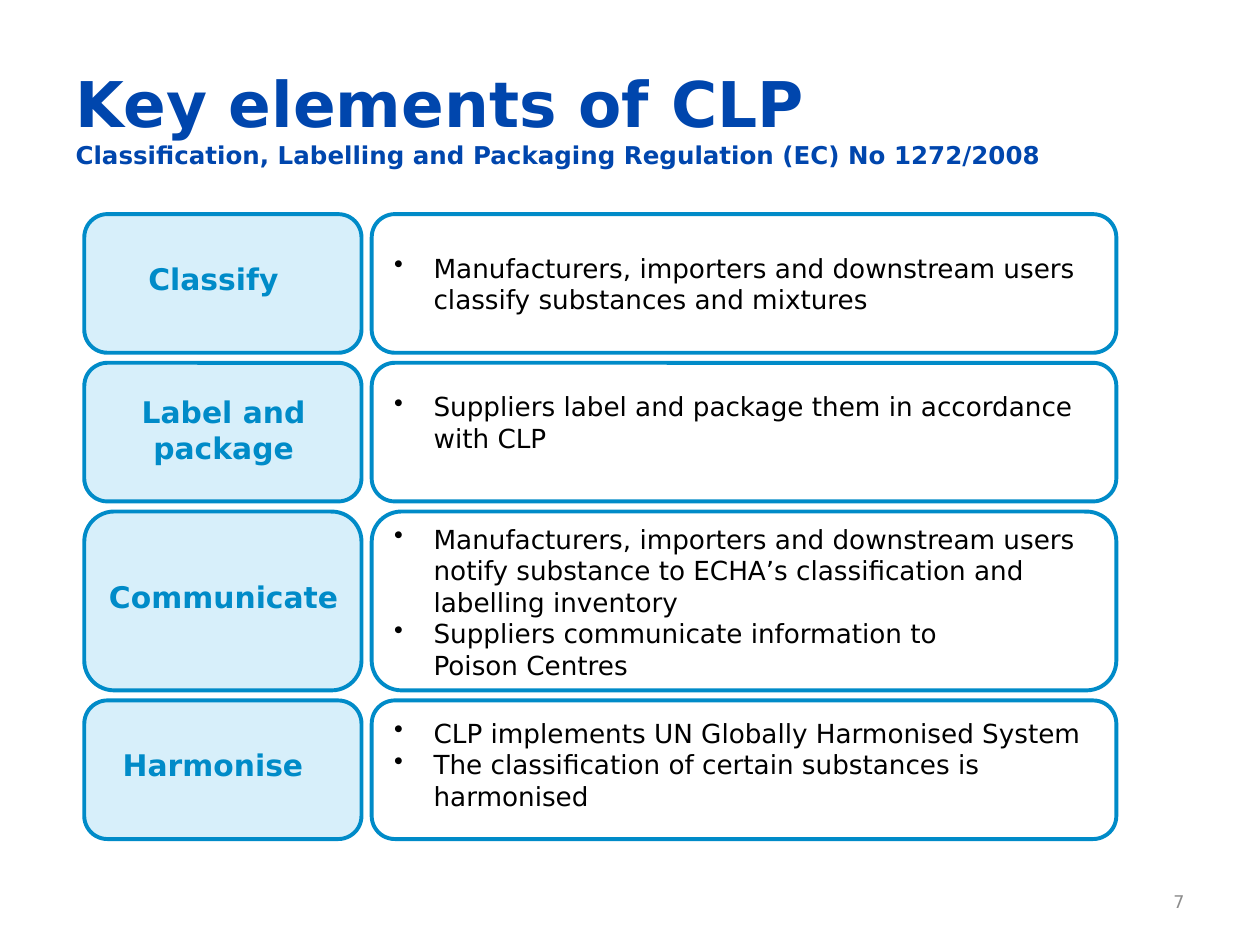
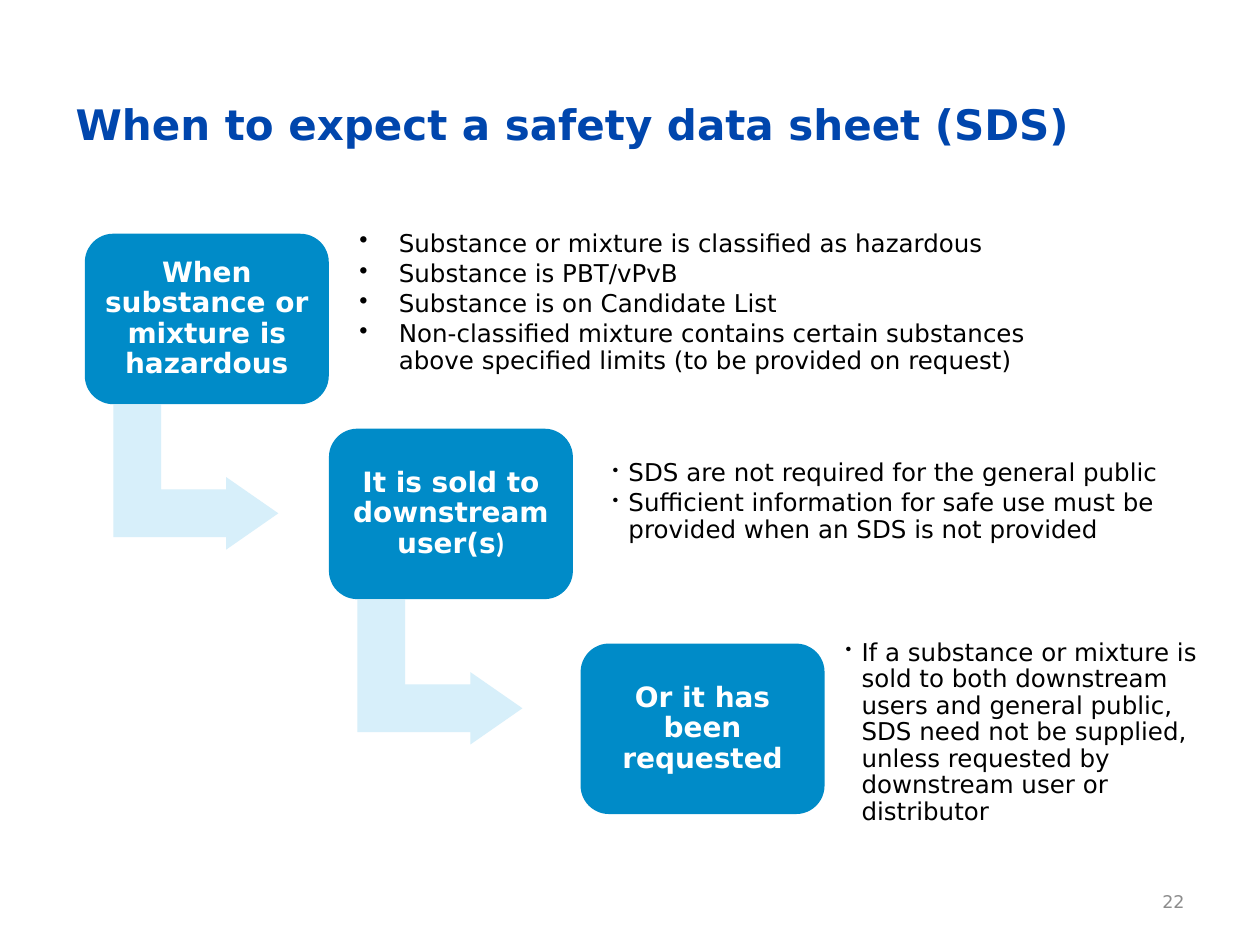
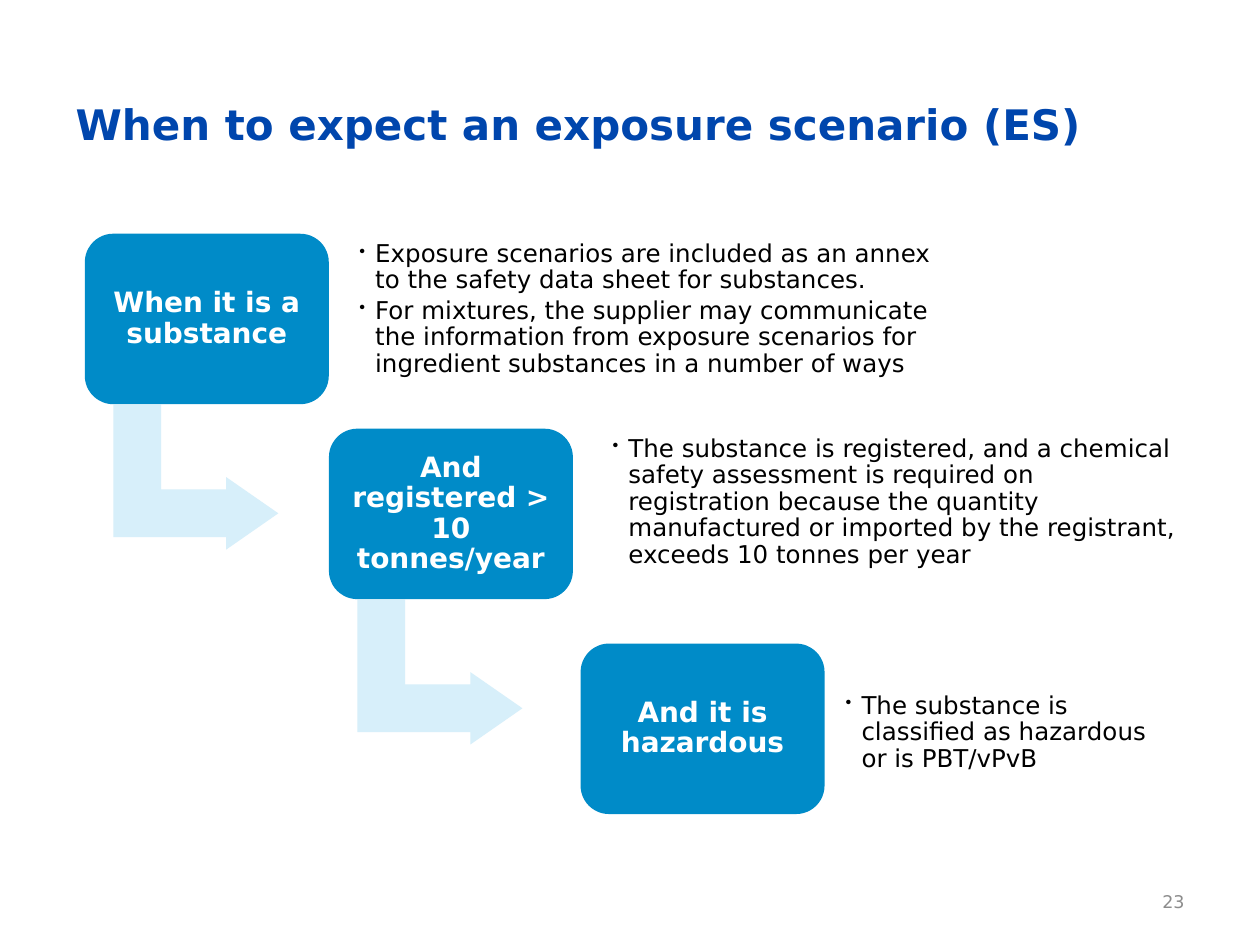
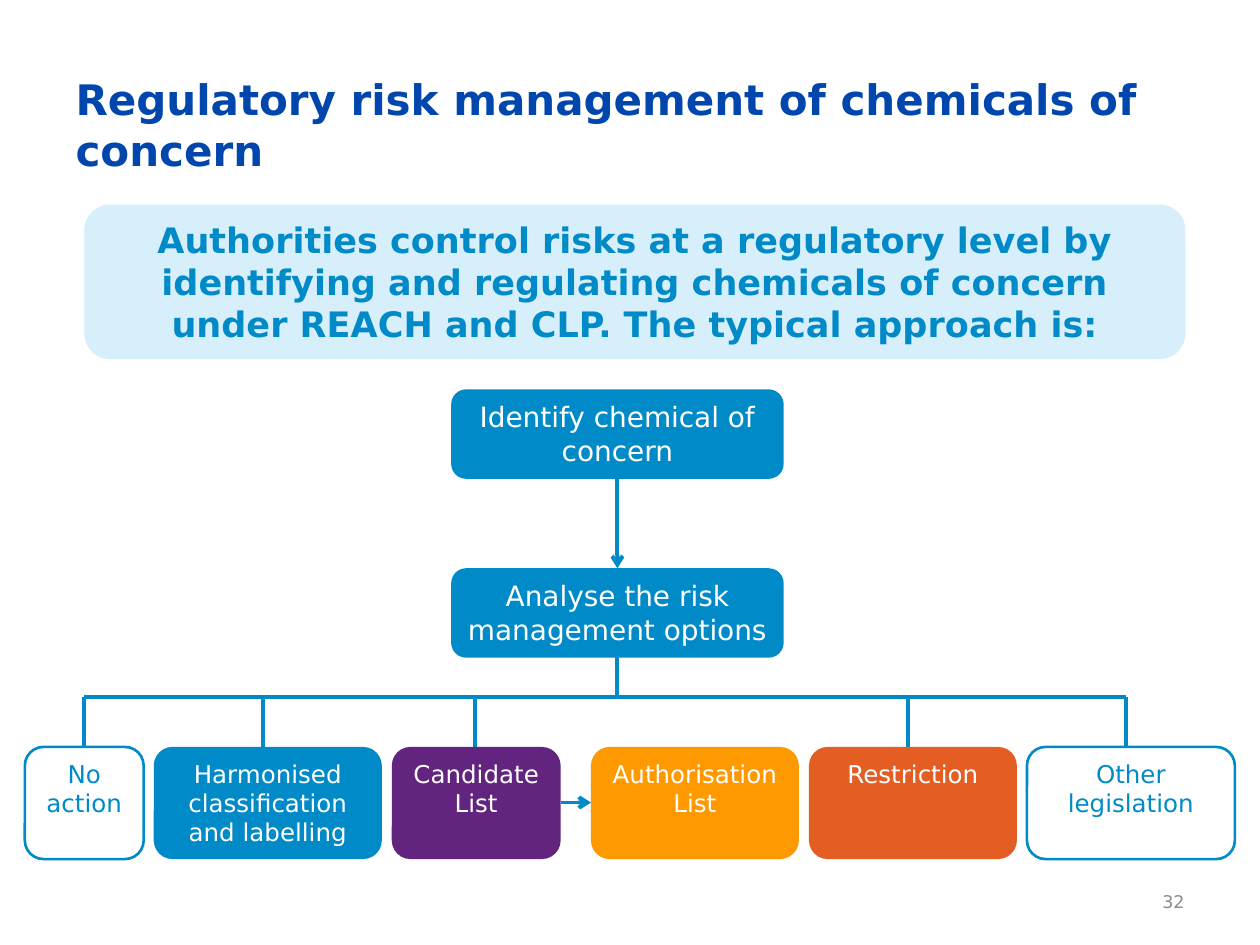
from dataclasses import dataclass

import pptx
import pptx.dml.color
import pptx.enum.shapes
import pptx.enum.text
import pptx.oxml
import pptx.oxml.ns
import pptx.util
from lxml import etree

Pt = pptx.util.Pt
qn = pptx.oxml.ns.qn
SHAPES = pptx.enum.shapes.MSO_SHAPE
ALIGN = pptx.enum.text.PP_ALIGN
ANCHOR = pptx.enum.text.MSO_ANCHOR


@dataclass(frozen=True)
class Theme:
    font: str = "DejaVu Sans"
    title: str = "0046AD"
    accent: str = "008BC8"
    pale: str = "D7EFFA"
    text: str = "000000"
    white: str = "FFFFFF"
    muted: str = "8C8C8C"
    purple: str = "62247E"
    amber: str = "FF9900"
    orange: str = "E45E24"
    headline_size: float = 36
    title_size: float = 24
    banner_size: float = 20
    label_size: float = 17
    node_size: float = 16
    list_size: float = 15
    note_size: float = 14
    number_size: float = 10
    line_width: float = 2.25
    thin_line: float = 1.5


THEME = Theme()
GAP = 5.76
STEP_SIZE = (139.4, 97.4)
STEP_CORNERS = [(48.5, 133.6), (188, 245), (331.8, 367.8)]
ARROW_OFFSET = (22, 91.9)
ARROW_SIZE = (82.8, 94.3)


def rgb(color):
    return pptx.dml.color.RGBColor.from_string(color)


def format_run(run, size, color, bold=False, font=THEME.font):
    run.font.name = font
    run.font.size = Pt(size)
    run.font.bold = bold
    run.font.color.rgb = rgb(color)


def set_text(shape, paragraphs, size, color, bold=False, align=ALIGN.LEFT,
             anchor=ANCHOR.TOP, line_spacing=None, inset=None):
    frame = shape.text_frame
    frame.text = "\n".join(paragraphs)
    frame.word_wrap = True
    frame.auto_size = pptx.enum.text.MSO_AUTO_SIZE.NONE
    frame.vertical_anchor = anchor
    if inset is not None:
        frame.margin_left = frame.margin_right = Pt(inset)
        frame.margin_top = frame.margin_bottom = Pt(inset)
    for paragraph in frame.paragraphs:
        paragraph.alignment = align
        if line_spacing:
            paragraph.line_spacing = line_spacing
        for run in paragraph.runs:
            format_run(run, size, color, bold)
        for line_break in paragraph._p.findall(qn("a:br")):
            etree.SubElement(line_break, qn("a:rPr"), sz=str(int(size * 100)))


def add_bullets(shape, indent, percent=100, space_after=0):
    for paragraph in shape.text_frame.paragraphs:
        paragraph.space_after = Pt(space_after)
        properties = paragraph._p.get_or_add_pPr()
        properties.set("marL", str(Pt(indent)))
        properties.set("indent", str(-Pt(indent)))
        etree.SubElement(properties, qn("a:buSzPct"), val=str(percent * 1000))
        etree.SubElement(properties, qn("a:buChar"), char="•")


def add_text(slide, left, top, width, height, paragraphs, size, color, **style):
    box = slide.shapes.add_textbox(Pt(left), Pt(top), Pt(width), Pt(height))
    set_text(box, paragraphs, size, color, **style)
    return box


def add_block(slide, left, top, width, height, fill=None, outline=None,
              line_width=THEME.line_width, kind=SHAPES.ROUNDED_RECTANGLE):
    block = slide.shapes.add_shape(kind, Pt(left), Pt(top), Pt(width), Pt(height))
    block.shadow.inherit = False
    if fill:
        block.fill.solid()
        block.fill.fore_color.rgb = rgb(fill)
    else:
        block.fill.background()
    if outline:
        block.line.color.rgb = rgb(outline)
        block.line.width = Pt(line_width)
    else:
        block.line.fill.background()
    return block


def add_line(slide, start, end, arrow=False):
    connector = slide.shapes.add_connector(
        pptx.enum.shapes.MSO_CONNECTOR.STRAIGHT, *(Pt(value) for value in start + end))
    connector.line.color.rgb = rgb(THEME.accent)
    connector.line.width = Pt(THEME.line_width)
    if arrow:
        etree.SubElement(connector.line._get_or_add_ln(), qn("a:tailEnd"), type="arrow")
    etree.SubElement(connector._element.spPr, qn("a:effectLst"))


def add_slide(presentation, number, title, subtitle=None):
    slide = presentation.slides.add_slide(presentation.slide_layouts[5])
    heading = slide.shapes.title
    heading.left, heading.top = Pt(36), Pt(21.6 if subtitle else 25.9)
    heading.width, heading.height = Pt(648), Pt(90)
    lines = [title, subtitle] if subtitle else [title]
    set_text(heading, lines, THEME.headline_size if subtitle else THEME.title_size,
             THEME.title, bold=True, anchor=ANCHOR.MIDDLE)
    if subtitle:
        heading.text_frame.paragraphs[1].runs[0].font.size = Pt(THEME.note_size)
    add_text(slide, 516, 500.5, 168, 28.8, [str(number)], THEME.number_size,
             THEME.muted, align=ALIGN.RIGHT, anchor=ANCHOR.MIDDLE)
    return slide


def add_element_rows(slide, rows):
    """Stack rows of a label block and a bullet panel; text tops are offsets in the row."""
    top = 122.4
    for height, label, (label_left, label_top, label_width), list_top, bullets in rows:
        add_block(slide, 48.2, top, 158.4, height, THEME.pale, THEME.accent)
        add_text(slide, label_left, top + label_top, label_width, height - label_top,
                 [label], THEME.label_size, THEME.accent, bold=True, align=ALIGN.CENTER)
        add_block(slide, 212.4, top, 425.5, height, outline=THEME.accent)
        box = add_text(slide, 218.2, top + list_top, 416, height - list_top,
                       bullets, THEME.list_size, THEME.text)
        add_bullets(box, 22.5)
        top += height + GAP


def add_step_flow(slide, steps):
    """Draw descending steps, each with a note beside it, and return the step cards."""
    cards = []
    for (left, top), (label, note_frame, bullets, indent, percent) in zip(STEP_CORNERS, steps):
        if len(cards) < len(steps) - 1:
            arrow = add_block(slide, left + ARROW_OFFSET[0], top + ARROW_OFFSET[1],
                              *ARROW_SIZE, fill=THEME.pale, kind=SHAPES.BENT_UP_ARROW)
            arrow.rotation = 90
            for index, value in enumerate((0.33, 0.25, 0.36)):
                arrow.adjustments[index] = value
        card = add_block(slide, left, top, *STEP_SIZE, fill=THEME.accent)
        set_text(card, [label], THEME.node_size, THEME.white, bold=True, align=ALIGN.CENTER,
                 anchor=ANCHOR.MIDDLE, line_spacing=0.9, inset=4.9)
        cards.append(card)
        note = add_text(slide, *note_frame, bullets, THEME.note_size, THEME.text,
                        anchor=ANCHOR.MIDDLE, line_spacing=0.9, inset=4.5)
        add_bullets(note, indent, percent, space_after=2.1)
    return cards


def add_node(slide, left, top, width, height, label, size, fill, outlined=False):
    node = add_block(slide, left, top, width, height, fill,
                     THEME.accent if outlined else None, THEME.thin_line)
    set_text(node, [label], size, THEME.accent if outlined else THEME.white,
             align=ALIGN.CENTER)


def add_decision_tree(slide, outcomes):
    """Draw two stages and a row of outcomes that hang from a shared bus line."""
    center, bus_top, row_top, row_height = 352.8, 398.2, 426.8, 64.1
    stage_tops, stage_height = (222.5, 324.7), 51.1
    drops = [drop for _, _, drop, _, _ in outcomes if drop]
    add_line(slide, (center, stage_tops[1]), (center, bus_top))
    for drop in drops:
        add_line(slide, (drop, bus_top), (drop, 440))
    labels = ("Identify chemical of concern", "Analyse the risk management options")
    for top, label in zip(stage_tops, labels):
        add_node(slide, center - 95, top, 190, stage_height, label,
                 THEME.node_size, THEME.accent)
    left = 14.2
    for label, width, drop, fill, outlined in outcomes:
        if not drop:
            arrow_start = left - GAP
            left = arrow_start + 3 * GAP
            add_line(slide, (arrow_start, 458.6), (left, 458.6), arrow=True)
        add_node(slide, left, row_top, width, row_height, label,
                 THEME.note_size, fill, outlined)
        left += width + GAP
    add_line(slide, (drops[0], bus_top), (drops[-1], bus_top))
    add_line(slide, (center, stage_tops[0] + stage_height), (center, stage_tops[1]), arrow=True)


def main():
    presentation = pptx.Presentation()
    presentation.slide_width, presentation.slide_height = Pt(720), Pt(540)

    slide = add_slide(presentation, 7, "Key elements of CLP",
                      "Classification, Labelling and Packaging Regulation (EC) No 1272/2008")
    add_element_rows(slide, [
        (79.2, "Classify", (48.2, 23, 147.6), 18,
         ["Manufacturers, importers and downstream users classify substances and mixtures"]),
        (79.2, "Label and package", (54, 14.4, 147.6), 12.2,
         ["Suppliers label and package them in accordance with CLP"]),
        (102.2, "Communicate", (54, 34.6, 147.6), 2.9,
         ["Manufacturers, importers and downstream users notify substance to "
          "ECHA’s classification and \vlabelling inventory",
          "Suppliers communicate information to \vPoison Centres"]),
        (79.2, "Harmonise", (36.7, 23, 170), 5.8,
         ["CLP implements UN Globally Harmonised System",
          "The classification of certain substances is harmonised"]),
    ])

    slide = add_slide(presentation, 22, "When to expect a safety data sheet (SDS)")
    cards = add_step_flow(slide, [
        ("When substance or mixture is hazardous", (200.9, 133.9, 396.7, 78.5),
         ["Substance or mixture is classified as hazardous",
          "Substance is PBT/vPvB",
          "Substance is on Candidate List",
          "Non-classified mixture contains certain substances above specified limits "
          "(to be provided on request)"], 22.5, 100),
        ("It is sold to downstream user(s", (345.6, 247.7, 331.9, 78.5),
         ["SDS are not required for the general public",
          "Sufficient information for safe use must be provided when an SDS is not provided"],
         9, 70),
        ("Or it has been requested", (478.8, 355, 221, 127.4),
         ["If a substance or mixture is sold to both downstream users and general public, "
          "SDS need not be supplied, unless requested by downstream user or distributor"],
         9, 70),
    ])
    closing_bracket = cards[1].text_frame.paragraphs[0].add_run()
    closing_bracket.text = ")"
    format_run(closing_bracket, THEME.node_size, THEME.white, bold=True, font="Calibri")

    slide = add_slide(presentation, 23, "When to expect an exposure scenario (ES)")
    add_step_flow(slide, [
        ("When it is a substance", (200.9, 137.5, 336.2, 78.5),
         ["Exposure scenarios are included as an annex to the safety data sheet for substances.",
          "For mixtures, the supplier may communicate the information from exposure "
          "scenarios for ingredient substances in a number of ways"], 9, 70),
        ("And registered > 10 tonnes/year", (345.6, 247.7, 331.9, 78.5),
         ["The substance is registered, and a chemical safety assessment is required on "
          "registration because the quantity manufactured or imported by the registrant, "
          "exceeds 10 tonnes per year"], 9, 70),
        ("And it is hazardous", (478.8, 355, 189.4, 127.4),
         ["The substance is classified as hazardous or is PBT/vPvB"], 9, 70),
    ])

    slide = add_slide(presentation, 32, "Regulatory risk management of chemicals of concern")
    banner = add_block(slide, 48.2, 116.9, 629.3, 88.3, THEME.pale)
    set_text(banner, ["Authorities control risks at a regulatory level by identifying and "
                      "regulating chemicals of concern under REACH and CLP. "
                      "The typical approach is:"],
             THEME.banner_size, THEME.accent, bold=True, align=ALIGN.CENTER)
    add_decision_tree(slide, [
        ("No action", 67.9, 48.2, THEME.white, True),
        ("Harmonised classification and labelling", 130.3, 150.5, THEME.accent, False),
        ("Candidate List", 96.5, 271.4, THEME.purple, False),
        ("Authorisation List", 118.8, None, THEME.amber, False),
        ("Restriction", 118.8, 518.6, THEME.orange, False),
        ("Other legislation", 118.8, 643.5, THEME.white, True),
    ])

    presentation.save("out.pptx")


if __name__ == "__main__":
    main()
